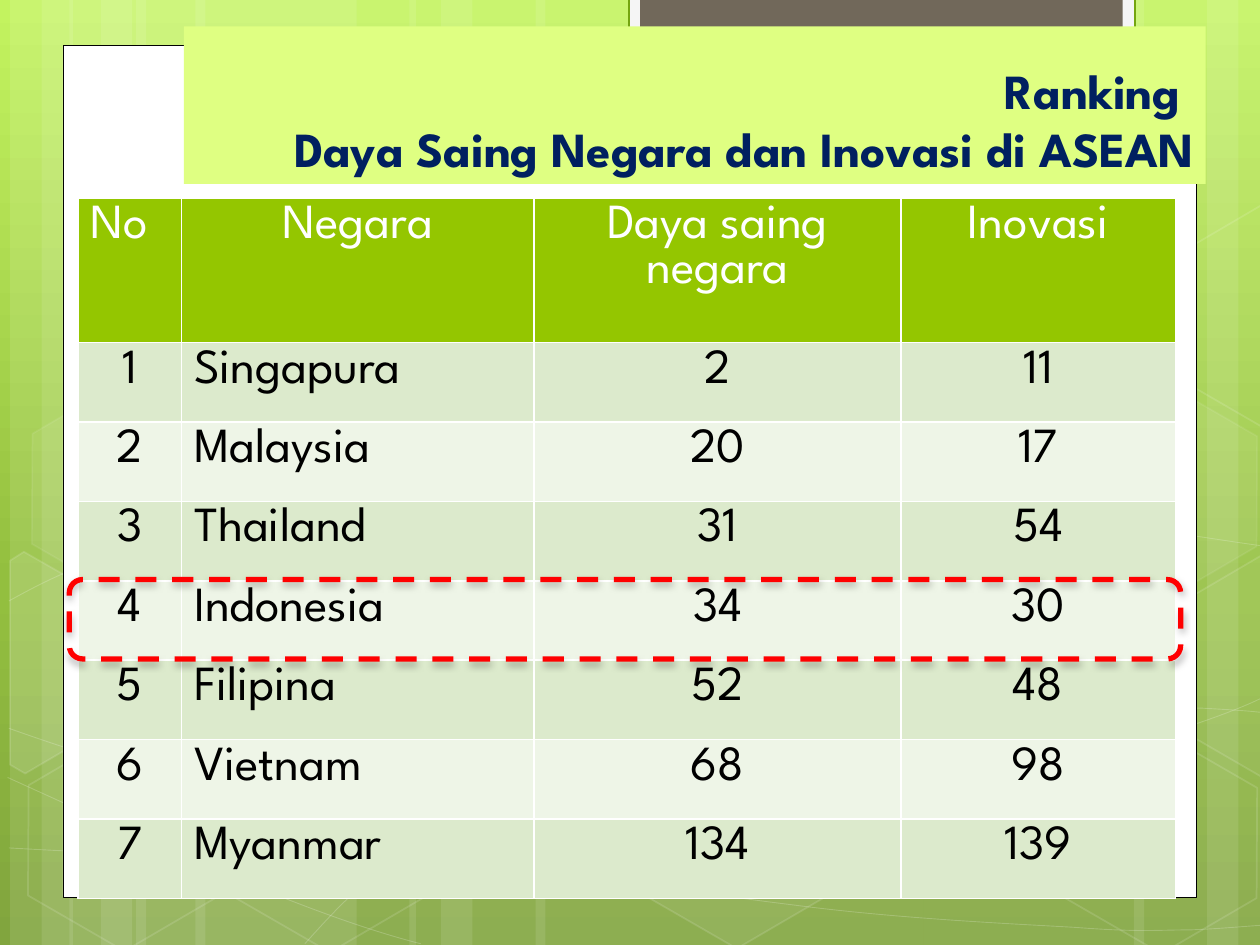
import copy

import lxml.etree
import pptx
import pptx.dml.color
import pptx.enum.dml
import pptx.enum.shapes
import pptx.enum.text
import pptx.oxml
import pptx.oxml.ns
import pptx.util

Inches = pptx.util.Inches
Pt = pptx.util.Pt
qn = pptx.oxml.ns.qn
SHAPE = pptx.enum.shapes.MSO_SHAPE
ALIGN = pptx.enum.text.PP_ALIGN
FONT = "League Spartan"
WHITE = "FFFFFF"

BACKGROUND = [(0, "C3F35F"), (0.62, "93BF3F"), (1, "81A53E")]
BARS = [(1.08, 1.75), (0.08, 0.5), (0.33, 0.83), (1.55, 1.75), (0.55, 0.5), (0.8, 0.83),
        (7.33, 1.75), (9.58, 0.5), (9, 0.83), (4.25, 3.08), (3.25, 0.5), (3.5, 0.83)]
CURVES = [
    [(0.07, 6.73), (0.61, 6.76), (1.15, 6.79), (1.9, 6.78), (2.65, 6.77), (3.58, 6.75),
     (4.58, 6.65), (5.58, 6.55), (7, 6.36), (7.92, 6.17), (8.83, 5.98), (9.77, 5.68), (10.07, 5.51)],
    [(0.07, 4.77), (0.36, 4.61), (0.65, 4.46), (1.21, 4.31), (1.78, 4.16), (2.59, 3.94),
     (3.47, 3.87), (4.36, 3.8), (5.44, 3.79), (6.54, 3.87), (7.64, 3.95), (9.47, 4.26), (10.07, 4.34)],
    [(0.06, 6.17), (1.27, 6.72), (2.47, 7.27), (3.34, 7.49)],
    [(0.07, 5.78), (0.38, 5.89), (0.7, 6), (1.28, 6.16), (1.86, 6.31), (2.73, 6.56),
     (3.57, 6.73), (4.4, 6.9), (5.45, 7.08), (6.28, 7.18), (7.11, 7.29), (8, 7.33),
     (8.53, 7.36), (9.05, 7.4), (9.19, 7.38), (9.45, 7.38), (9.71, 7.37), (9.89, 7.35), (10.07, 7.34)],
    [(2.42, 7.49), (2.6, 7.29), (2.78, 7.09), (3.02, 6.91), (3.26, 6.73), (3.6, 6.53),
     (3.88, 6.39), (4.16, 6.25), (4.33, 6.19), (4.7, 6.09), (5.06, 5.99), (5.73, 5.85),
     (6.08, 5.78), (6.44, 5.71), (6.49, 5.71), (6.8, 5.69), (7.11, 5.66), (7.6, 5.63),
     (7.94, 5.62), (8.29, 5.61), (8.86, 5.62), (8.86, 5.62), (9.08, 5.62), (9.31, 5.62),
     (9.53, 5.62), (9.71, 5.63), (9.88, 5.64), (9.97, 5.65), (10.06, 5.66), (10.03, 5.65), (10.06, 5.66)],
]
HEXAGONS = [(3.34, 0.36, 4, 8), (4.97, 5.89, 6, 12), (0.11, 5.91, None, 12),
            (0.14, 3.12, 7, 8), (1.74, 5.92, None, 12), (7.53, 4.53, 10, 12),
            (8.34, 5.93, None, 12), (8.34, 3.14, 7, 8)]
CUT_HEXAGONS = [
    ([(0.08, 4.45), (0.19, 4.38), (0.96, 4.82), (0.95, 5.7), (0.2, 6.14), (0.08, 6.07)], 10),
    ([(9.26, 4.85), (10.01, 4.41), (10.09, 4.46), (10.09, 6.13), (10.02, 6.17), (9.26, 5.73)], 4),
    ([(9.26, 2.07), (10.01, 1.63), (10.1, 1.68), (10.09, 3.35), (10.02, 3.39), (9.26, 2.95)], None),
]
ROWS = [("No", "Negara", "Daya saing negara", "Inovasi"),
        ("1", "Singapura", "2", "11"),
        ("2", "Malaysia", "20", "17"),
        ("3", "Thailand", "31", "54"),
        ("4", "Indonesia", "34", "30"),
        ("5", "Filipina", "52", "48"),
        ("6", "Vietnam", "68", "98"),
        ("7", "Myanmar", "134", "139")]
COLUMN_WIDTHS = [0.82, 2.8, 2.91, 2.18]


def rgb(color):
    """Turn a hex string into a colour."""
    return pptx.dml.color.RGBColor.from_string(color)


def paint(fill, color, opacity=100):
    """Fill with a solid colour at an opacity in percent, or with nothing."""
    if color is None or opacity is None:
        fill.background()
        return
    fill.solid()
    fill.fore_color.rgb = rgb(color)
    if opacity < 100:
        node = fill._xPr.find(".//" + qn("a:srgbClr"))
        lxml.etree.SubElement(node, qn("a:alpha")).set("val", str(opacity * 1000))


def style(sp, fill=None, opacity=100, line=None, width=1, line_opacity=100):
    """Set the fill and outline of a shape and drop its shadow."""
    sp.shadow.inherit = False
    paint(sp.fill, fill, opacity)
    paint(sp.line.fill, line, line_opacity)
    if line:
        sp.line.width = Pt(width)


def add_box(s, kind, x, y, w, h, **look):
    """Add a styled preset shape."""
    sp = s.shapes.add_shape(kind, Inches(x), Inches(y), Inches(w), Inches(h))
    style(sp, **look)
    return sp


def add_outline(s, points, close, **look):
    """Add a styled freeform through the points."""
    start, *rest = [(Inches(x), Inches(y)) for x, y in points]
    builder = s.shapes.build_freeform(*start)
    builder.add_line_segments(rest, close=close)
    sp = builder.convert_to_shape()
    style(sp, **look)
    return sp


def add_curve(s, knots):
    """Add a thin line of cubic segments, each made of three knots."""
    sp = add_outline(s, knots, False, line=WHITE, width=0.5, line_opacity=20)
    segments = list(sp._element.iter(qn("a:lnTo")))
    for i in range(0, len(segments), 3):
        cubic = lxml.etree.Element(qn("a:cubicBezTo"))
        segments[i].addprevious(cubic)
        for segment in segments[i:i + 3]:
            cubic.append(segment[0])
            segment.getparent().remove(segment)


def set_background(s):
    """Give the slide its vertical green gradient."""
    fill = s.background.fill
    fill.gradient()
    fill.gradient_angle = 270
    stops = s._element.find(".//" + qn("a:gsLst"))
    stops.append(copy.deepcopy(stops[-1]))
    for stop, (position, color) in zip(fill.gradient_stops, BACKGROUND):
        stop.position = position
        stop.color.rgb = rgb(color)


def add_decoration(s):
    """Draw the translucent bars, curves and hexagons."""
    for x, w in BARS:
        add_box(s, SHAPE.RECTANGLE, x, 0, w, 7.5, fill=WHITE, opacity=10)
    for knots in CURVES:
        add_curve(s, knots)
    for x, y, opacity, line_opacity in HEXAGONS:
        sp = add_box(s, SHAPE.HEXAGON, x, y, 1.75, 1.52, fill=WHITE, opacity=opacity,
                     line=WHITE, line_opacity=line_opacity)
        sp.adjustments[0] = 0.285
        sp.rotation = 30
    for points, opacity in CUT_HEXAGONS:
        add_outline(s, points, True, fill=WHITE, opacity=opacity, line=WHITE, line_opacity=12)


def add_panels(s):
    """Draw the white page and the tab at its top."""
    add_box(s, SHAPE.RECTANGLE, 0.5, 0.36, 9, 6.76, fill=WHITE, line="000000", width=0.5)
    add_box(s, SHAPE.RECTANGLE, 4.99, -0.02, 4.02, 0.76, fill="F5F5F5", line="74A510", width=1.25)
    add_box(s, SHAPE.RECTANGLE, 5.08, -0.02, 3.83, 0.68, fill="71685A")


def format_text(p, color, align, bold=False):
    """Align a paragraph and format its runs."""
    p.alignment = align
    for r in p.runs:
        r.font.name = FONT
        r.font.size = Pt(28)
        r.font.bold = bold
        r.font.color.rgb = rgb(color)


def set_title(s):
    """Place the title above the panels."""
    sp = s.shapes.title
    s.shapes._spTree.append(sp._element)
    sp.left, sp.top, sp.width, sp.height = map(Inches, (1.46, 0.21, 8.11, 1.25))
    paint(sp.fill, "DFFF82")
    tf = sp.text_frame
    tf.text = "Ranking \vDaya Saing Negara dan Inovasi di ASEAN"
    tf.word_wrap = True
    tf.auto_size = pptx.enum.text.MSO_AUTO_SIZE.NONE
    tf.vertical_anchor = pptx.enum.text.MSO_ANCHOR.BOTTOM
    p = tf.paragraphs[0]
    p.line_spacing = Pt(33.5)
    format_text(p, "002060", ALIGN.RIGHT, bold=True)


def set_borders(cell):
    """Put a thin white line on each side of a cell."""
    tcPr = cell._tc.get_or_add_tcPr()
    for i, side in enumerate(("lnL", "lnR", "lnT", "lnB")):
        ln = pptx.oxml.parse_xml(
            f'<a:{side} {pptx.oxml.ns.nsdecls("a")} w="12700"><a:solidFill>'
            f'<a:srgbClr val="{WHITE}"/></a:solidFill></a:{side}>')
        tcPr.insert(i, ln)


def add_ranking_table(s):
    """Add the table of countries with banded rows."""
    table = s.shapes.add_table(len(ROWS), len(COLUMN_WIDTHS), Inches(0.62), Inches(1.57),
                               Inches(sum(COLUMN_WIDTHS)), Inches(5.56)).table
    for column, width in zip(table.columns, COLUMN_WIDTHS):
        column.width = Inches(width)
    for i, row in enumerate(ROWS):
        table.rows[i].height = Inches(0.63 if i else 1.15)
        band = ("EEF5E7", "DCEACC")[i % 2] if i else "94C600"
        for j, text in enumerate(row):
            cell = table.cell(i, j)
            cell.text = text
            paint(cell.fill, band)
            set_borders(cell)
            left = j == (1 if i else 0)
            format_text(cell.text_frame.paragraphs[0], "000000" if i else WHITE,
                        ALIGN.LEFT if left else ALIGN.CENTER)


def add_highlight(s):
    """Frame the Indonesia row with a dashed red outline and soft shadow."""
    sp = add_box(s, SHAPE.ROUNDED_RECTANGLE, 0.55, 4.6, 8.82, 0.63, line="FF0000", width=3)
    sp.line.dash_style = pptx.enum.dml.MSO_LINE.DASH
    effects = sp._element.spPr.find(qn("a:effectLst"))
    effects.append(pptx.oxml.parse_xml(
        f'<a:outerShdw {pptx.oxml.ns.nsdecls("a")} blurRad="{Pt(4)}" dist="{Pt(2)}" dir="5400000">'
        '<a:srgbClr val="000000"><a:alpha val="28000"/></a:srgbClr></a:outerShdw>'))


def main():
    """Build and save the slide."""
    prs = pptx.Presentation()
    prs.slide_width, prs.slide_height = Inches(10), Inches(7.5)
    s = prs.slides.add_slide(prs.slide_layouts[5])
    set_background(s)
    add_decoration(s)
    add_panels(s)
    set_title(s)
    add_ranking_table(s)
    add_highlight(s)
    prs.save("out.pptx")


if __name__ == "__main__":
    main()
